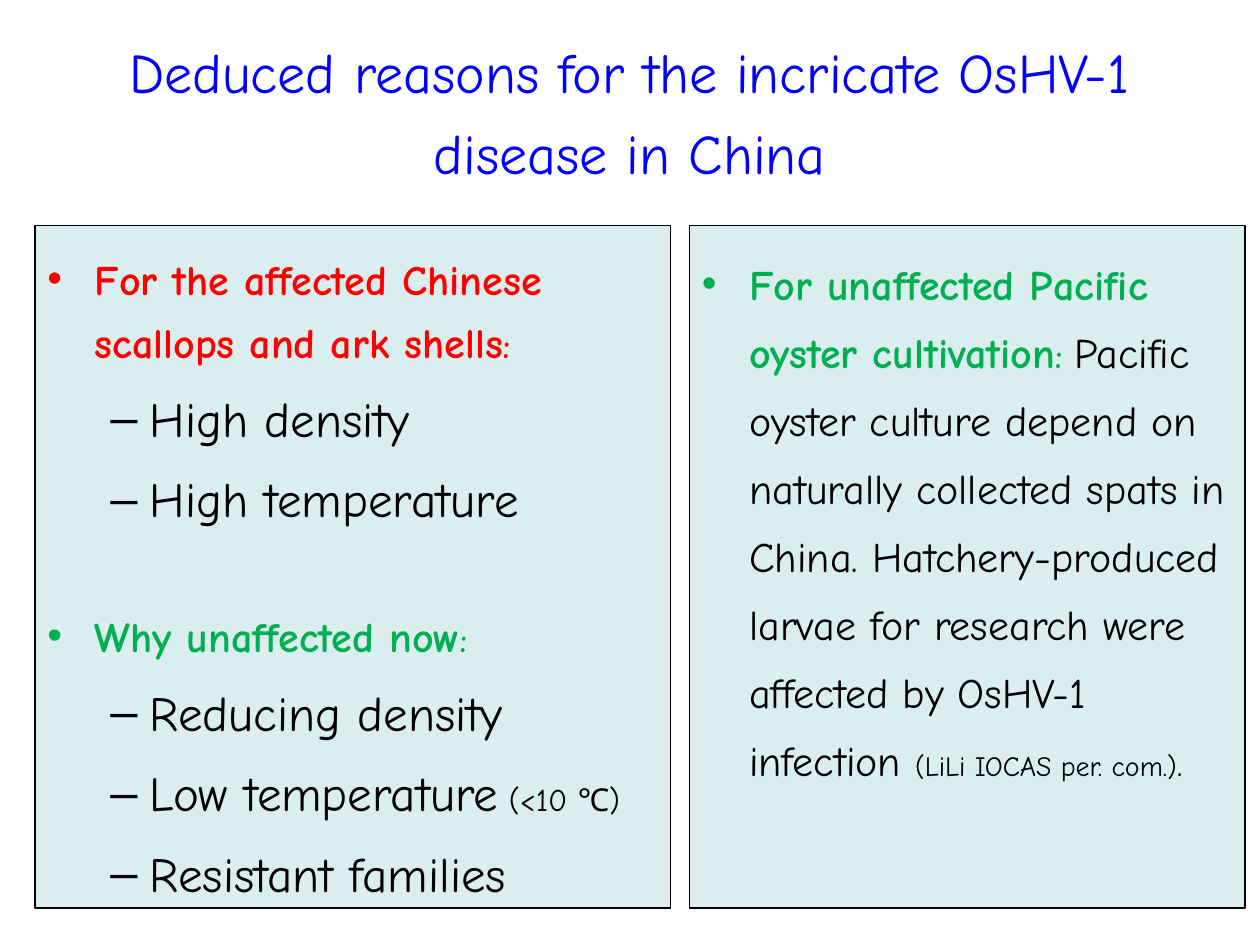
from lxml import etree
from pptx import Presentation
from pptx import util as u
from pptx.dml import color
from pptx.enum import shapes, text
from pptx.oxml import ns

Pt = u.Pt
FONT = "Comic Neue"
COLORS = {
    "title": "0000FF",
    "affected": "FF0000",
    "unaffected": "00B050",
    "body": "000000",
    "panel": "DAEDEF",
    "border": "000000",
}
BULLETS = {"•": (27, -27), "–": (58.5, -22.5)}


def rgb(name):
    return color.RGBColor.from_string(COLORS[name])


def add_span(para, wording, size, tint, bold=False):
    span = para.add_run()
    span.text = wording
    span.font.name = FONT
    span.font.size = Pt(size)
    span.font.bold = bold
    span.font.color.rgb = rgb(tint)


def add_bullet(para, mark):
    margin, indent = BULLETS[mark]
    properties = para._p.get_or_add_pPr()
    properties.set("marL", str(Pt(margin)))
    properties.set("indent", str(Pt(indent)))
    bullet_font = etree.SubElement(properties, ns.qn("a:buFont"))
    bullet_font.set("typeface", "Arial")
    bullet = etree.SubElement(properties, ns.qn("a:buChar"))
    bullet.set("char", mark)


def add_text_box(page, left, top, width, height):
    box = page.shapes.add_textbox(Pt(left), Pt(top), Pt(width), Pt(height))
    box.text_frame.word_wrap = True
    return box.text_frame


def add_title(page, left, top, width, height):
    frame = add_text_box(page, left, top, width, height)
    frame.vertical_anchor = text.MSO_ANCHOR.MIDDLE
    para = frame.paragraphs[0]
    para.alignment = text.PP_ALIGN.CENTER
    para.line_spacing = 1.2
    add_span(para, "Deduced reasons for the incricate OsHV-1 disease in China", 32, "title")


def add_panel(page, left, top, width, height):
    panel = page.shapes.add_shape(
        shapes.MSO_SHAPE.RECTANGLE, Pt(left), Pt(top), Pt(width), Pt(height)
    )
    panel.shadow.inherit = False
    panel.fill.solid()
    panel.fill.fore_color.rgb = rgb("panel")
    panel.line.color.rgb = rgb("border")
    panel.line.width = Pt(0.75)


def add_heading(para, wording, tint, spacing, ending=":"):
    para.line_spacing = spacing
    para.space_before = Pt(4.8)
    add_bullet(para, "•")
    add_span(para, wording, 24, tint, True)
    add_span(para, ending, 20, tint, True)


def add_reasons(page, left, top, width, height, heading, tint, reasons):
    frame = add_text_box(page, left, top, width, height)
    add_heading(frame.paragraphs[0], heading, tint, 1.25)
    for reason, remark in reasons:
        para = frame.add_paragraph()
        para.level = 1
        para.line_spacing = 1.2
        para.space_before = Pt(5.6)
        add_bullet(para, "–")
        add_span(para, reason, 28, "body")
        if remark:
            add_span(para, remark, 18, "body")


def add_scallop_panel(page, left, top, width, height):
    add_panel(page, left, top, width, height)
    add_reasons(
        page, left, top + 5, width - 6, 181,
        "For the affected Chinese scallops and ark shells", "affected",
        [("High density", ""), ("High temperature", "")],
    )
    add_reasons(
        page, left, top + 209, width + 11, 181,
        "Why unaffected now", "unaffected",
        [("Reducing density", ""), ("Low temperature", " (<10 ℃)"), ("Resistant families", "")],
    )


def add_oyster_panel(page, left, top, width, height):
    add_panel(page, left, top, width, height)
    frame = add_text_box(page, left, top + 5, width, height - 5)
    para = frame.paragraphs[0]
    add_heading(para, "For unaffected Pacific oyster cultivation", "unaffected", 1.35, ": ")
    add_span(
        para,
        "Pacific oyster culture depend on naturally collected spats in China. "
        "Hatchery-produced larvae for research were affected by OsHV-1 infection ",
        24, "body",
    )
    add_span(para, "(LiLi IOCAS per. com.)", 16, "body")
    add_span(para, ".", 20, "body")


def main():
    deck = Presentation()
    deck.slide_width, deck.slide_height = Pt(720), Pt(540)
    page = deck.slides.add_slide(deck.slide_layouts[6])
    add_title(page, 54, 15, 612, 90)
    add_scallop_panel(page, 20, 129, 363, 390)
    add_oyster_panel(page, 394, 129, 317.5, 390)
    deck.save("out.pptx")


if __name__ == "__main__":
    main()
